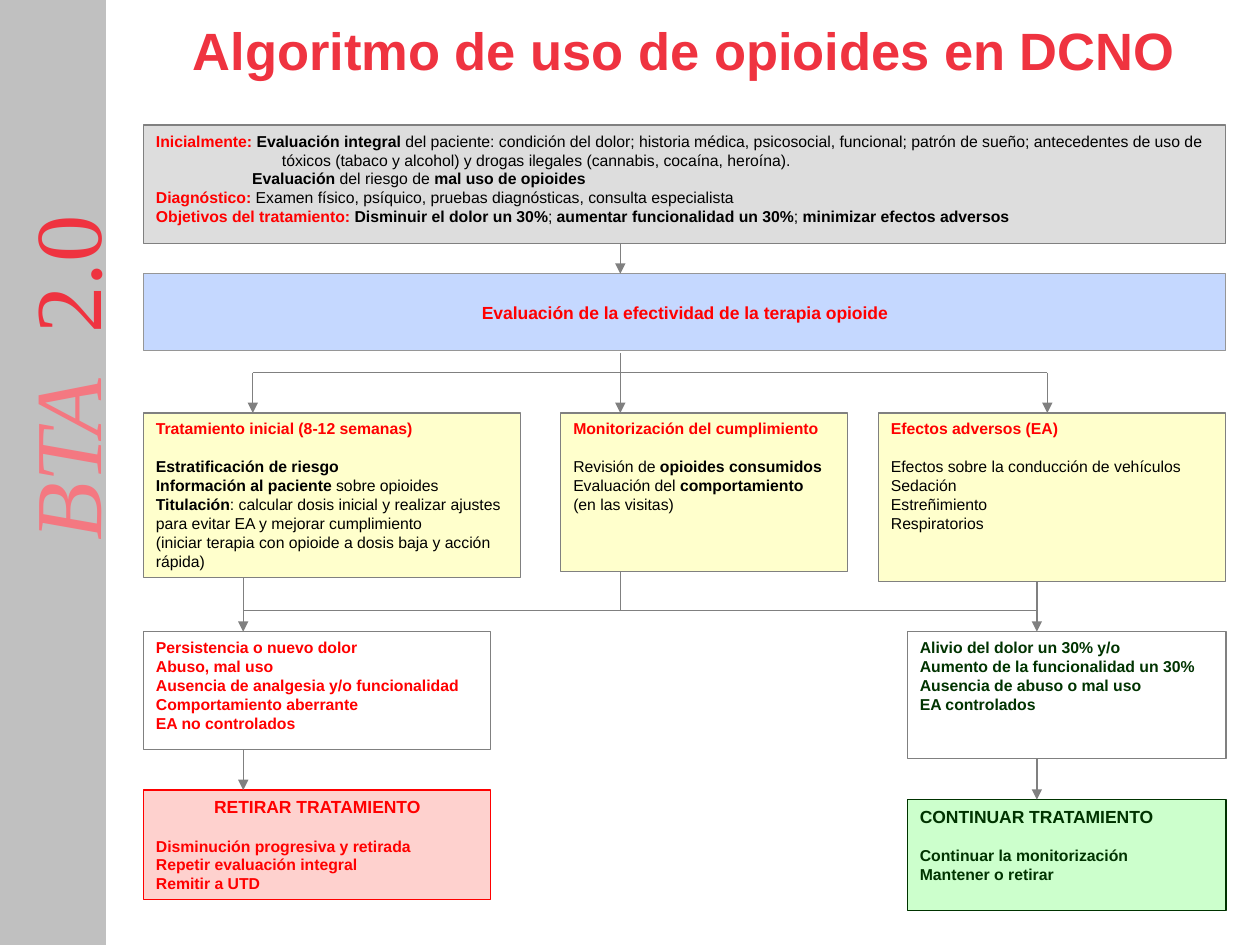
from dataclasses import dataclass

from lxml.etree import SubElement
from pptx import Presentation
from pptx.dml.color import RGBColor as RGB
from pptx.enum.shapes import MSO_CONNECTOR as LINE, MSO_SHAPE as SHAPE
from pptx.enum.text import MSO_ANCHOR as ANCHOR, PP_ALIGN as ALIGN
from pptx.oxml.ns import qn
from pptx.util import Pt


@dataclass
class Theme:
    font: str = "Arial"
    side_font: str = "Times New Roman"
    small: float = 9
    head: float = 10
    title: float = 30
    side: float = 54
    brand: str = "EF3340"
    pale: str = "F47881"
    band: str = "C0C0C0"
    red: str = "FF0000"
    black: str = "000000"
    green: str = "003300"
    gray: str = "808080"
    edge: str = "969696"
    silver: str = "DDDDDD"
    blue: str = "C5D8FF"
    yellow: str = "FFFFCC"
    pink: str = "FED1CE"
    mint: str = "CCFFCC"


T = Theme()
deck = Presentation()
deck.slide_width, deck.slide_height = Pt(720), Pt(540)
slide = deck.slides.add_slide(deck.slide_layouts[5])
shapes = slide.shapes


def box(x, y, w, h, fill, edge, paras, anchor=ANCHOR.TOP):
    """Each paragraph: (lead, rest, colour, options); the lead is bold red, * toggles bold in the rest."""
    shape = shapes.add_shape(SHAPE.RECTANGLE, Pt(x), Pt(y), Pt(w), Pt(h))
    shape.shadow.inherit = False
    if fill:
        shape.fill.solid()
        shape.fill.fore_color.rgb = RGB.from_string(fill)
    else:
        shape.fill.background()
    shape.line.color.rgb = RGB.from_string(edge)
    shape.line.width = Pt(0.75)
    frame = shape.text_frame
    frame.word_wrap = True
    frame.vertical_anchor = anchor
    for i, (lead, rest, color, opts) in enumerate(paras):
        para = frame.paragraphs[0] if i == 0 else frame.add_paragraph()
        para.alignment = opts.get("align", ALIGN.LEFT)
        para._p.get_or_add_pPr().set("marL", str(Pt(opts.get("indent", 0))))
        if "gap" in opts:
            para.space_before = Pt(opts["gap"])
        para.font.name = T.font
        para.font.size = Pt(opts.get("size", T.small))
        parts = [(lead, True, T.red)]
        parts += [(t, n % 2 == 1, color) for n, t in enumerate(rest.split("*"))]
        for text, bold, tint in parts:
            if text:
                run = para.add_run()
                run.text = text
                run.font.bold = bold
                run.font.color.rgb = RGB.from_string(tint)


def link(x1, y1, x2, y2, arrow=True):
    line = shapes.add_connector(LINE.STRAIGHT, Pt(x1), Pt(y1), Pt(x2), Pt(y2))
    line.line.color.rgb = RGB.from_string(T.gray)
    line.line.width = Pt(0.75)
    if arrow:
        SubElement(line.line._get_or_add_ln(), qn("a:tailEnd"), type="triangle")
    SubElement(line._element.spPr, qn("a:effectLst"))


# Side band with its upright label
band = shapes.add_shape(SHAPE.RECTANGLE, 0, 0, Pt(60), Pt(540))
band.shadow.inherit = False
band.fill.solid()
band.fill.fore_color.rgb = band.line.color.rgb = RGB.from_string(T.band)
band.line.width = Pt(0.75)

label = shapes.add_textbox(Pt(-80), Pt(163.5), Pt(232.5), Pt(72))
label.rotation = 270
label.text_frame.word_wrap = True
para = label.text_frame.paragraphs[0]
tabs = SubElement(para._p.get_or_add_pPr(), qn("a:tabLst"))
SubElement(tabs, qn("a:tab"), pos=str(Pt(118)), algn="l")
para.font.name, para.font.size = T.side_font, Pt(T.side)
for text, color, slant in (("BTA\t", T.pale, True), ("2.0", T.brand, False)):
    run = para.add_run()
    run.text = text
    run.font.italic = slant
    run.font.color.rgb = RGB.from_string(color)

# Title
title = shapes.title
title.left, title.top, title.width, title.height = Pt(67), Pt(3.5), Pt(648), Pt(50)
title.text_frame.text = "Algoritmo de uso de opioides en DCNO"
title.text_frame.vertical_anchor = ANCHOR.MIDDLE
para = title.text_frame.paragraphs[0]
para.alignment = ALIGN.CENTER
para.font.name, para.font.size, para.font.bold = T.font, Pt(T.title), True
para.font.color.rgb = RGB.from_string(T.brand)

# Full-width steps
left, right = 82, 700.5
wide = right - left
box(left, 71.5, wide, 67.5, T.silver, T.gray, [
    ("Inicialmente: ", "*Evaluación integral* del paciente: condición del dolor; historia médica, "
     "psicosocial, funcional; patrón de sueño; antecedentes de uso de", T.black, {}),
    ("", "tóxicos (tabaco y alcohol) y drogas ilegales (cannabis, cocaína, heroína).", T.black, {"indent": 72}),
    ("", "*Evaluación *del riesgo de* mal uso de opioides*", T.black, {"indent": 55}),
    ("Diagnóstico: ", "Examen físico, psíquico, pruebas diagnósticas, consulta especialista", T.black, {}),
    ("Objetivos del tratamiento: ", "*Disminuir el dolor un 30%*; *aumentar funcionalidad un 30%*;"
     "* minimizar efectos adversos*", T.black, {}),
])
box(left, 156.5, wide, 44, T.blue, T.edge, [
    ("Evaluación de la efectividad de la terapia opioide", "", T.red,
     {"size": T.head, "align": ALIGN.CENTER}),
], ANCHOR.MIDDLE)

# Three follow-up areas
row = 236
areas = [
    (left, 215.5, 94, "Tratamiento inicial (8-12 semanas)", [
        "*Estratificación de riesgo*",
        "*Información al paciente* sobre opioides",
        "*Titulación*: calcular dosis inicial y realizar ajustes para evitar EA y mejorar cumplimiento",
        "(iniciar terapia con opioide a dosis baja y acción rápida)"]),
    (320.5, 164, 90.5, "Monitorización del cumplimiento", [
        "Revisión de *opioides consumidos*",
        "Evaluación del *comportamiento*",
        "(en las visitas)"]),
    (502, 198.5, 96.5, "Efectos adversos (EA)", [
        "Efectos sobre la conducción de vehículos",
        "Sedación", "Estreñimiento", "Respiratorios"]),
]
for x, w, h, head, lines in areas:
    box(x, row, w, h, T.yellow, T.gray, [(head, "", T.red, {})] + [
        ("", text, T.black, {"gap": 10.8} if n == 0 else {}) for n, text in enumerate(lines)])

# Two outcomes: findings, then the decision
low = 361
outcomes = [
    (left, 198.5, 67.5, 451.5, 62.5, T.red, T.pink, ALIGN.CENTER, [
        "Persistencia o nuevo dolor", "Abuso, mal uso",
        "Ausencia de analgesia y/o funcionalidad", "Comportamiento aberrante",
        "EA no controlados"],
     "RETIRAR TRATAMIENTO", [
        "Disminución progresiva y retirada", "Repetir evaluación integral", "Remitir a UTD"]),
    (518.5, 182, 72.5, 457, 63.5, T.green, T.mint, ALIGN.LEFT, [
        "Alivio del dolor un 30% y/o", "Aumento de la funcionalidad un 30%",
        "Ausencia de abuso o mal uso", "EA controlados"],
     "CONTINUAR TRATAMIENTO", [
        "Continuar la monitorización", "Mantener o retirar"]),
]
for x, w, h, y2, h2, color, fill, align, signs, head, steps in outcomes:
    box(x, low, w, h, None, T.gray, [("", f"*{text}*", color, {}) for text in signs])
    box(x, y2, w, h2, fill, color,
        [("", f"*{head}*", color, {"size": T.head, "align": align})] + [
            ("", f"*{text}*", color, {"gap": 10.8} if n == 0 else {})
            for n, text in enumerate(steps)])

# Flow lines
mid, fork, join = 354.5, 213, 349
link(mid, 139.5, mid, 156.5)
link(mid, 202, mid, row)
link(144.5, fork, 598.5, fork, False)
for x in (144.5, 598.5):
    link(x, fork, x, row)
link(mid, row + 90.5, mid, join, False)
link(139, join, 592.5, join, False)
for x, top, h, y2 in ((139, 330, 67.5, 451.5), (592.5, 332.5, 72.5, 457)):
    link(x, top, x, low)
    link(x, low + h, x, y2)

deck.save("out.pptx")
